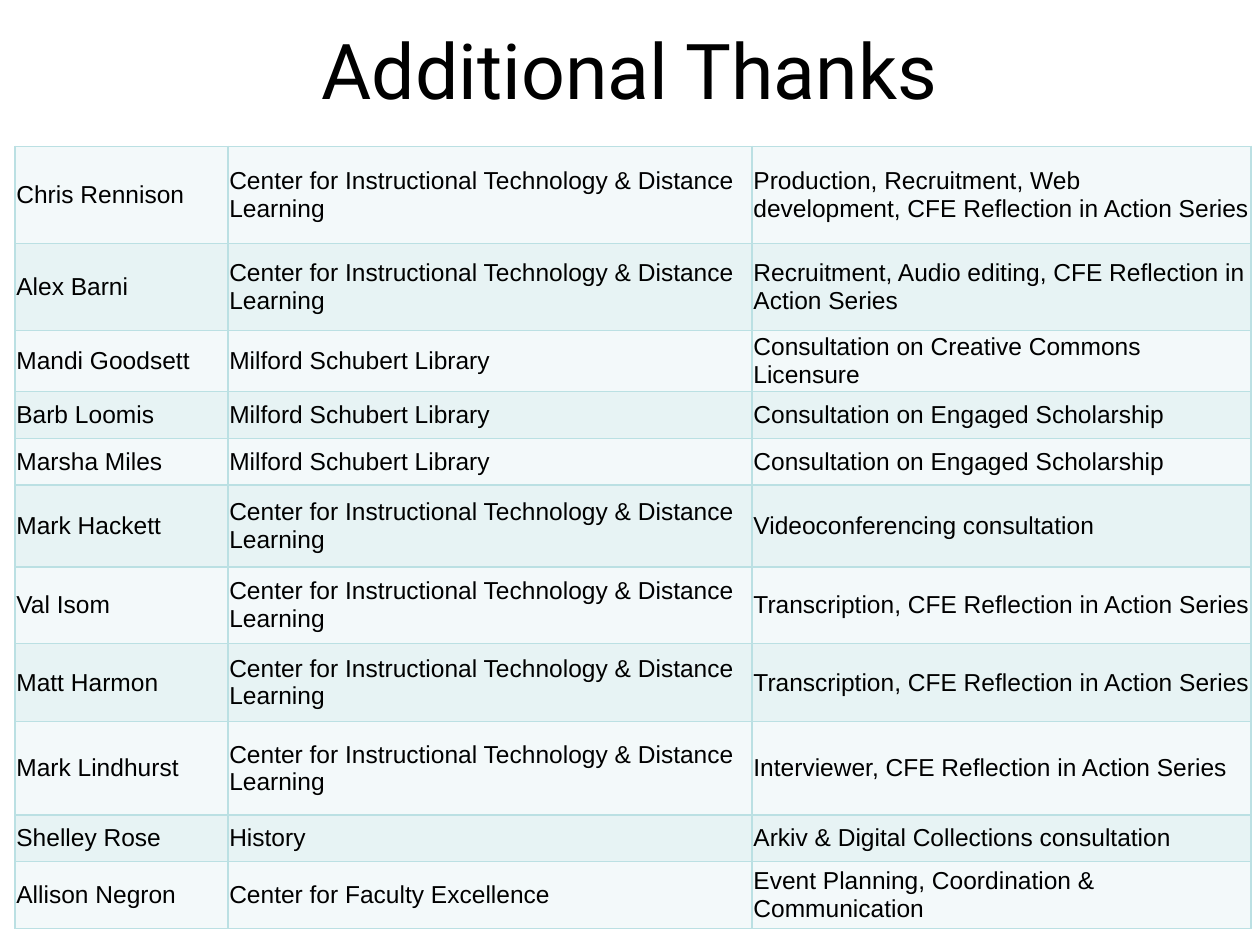
import pptx
import pptx.dml.color
import pptx.enum.text
import pptx.oxml
import pptx.oxml.ns
import pptx.util

SLIDE_WIDTH, SLIDE_HEIGHT = 10, 7.5
COLUMN_WIDTHS = [1.69, 4.16, 3.96]
ROW_HEIGHTS = [0.77, 0.69, 0.37, 0.37, 0.37, 0.65, 0.61, 0.62, 0.74, 0.37, 0.53]
ROW_FILLS = ["F3F9FA", "E7F3F4"]
BORDER_COLOUR = "BBE0E3"
TEXT_COLOUR = "000000"

TECHNOLOGY = "Center for Instructional Technology & Distance Learning"
LIBRARY = "Milford Schubert Library"
NO_BREAK_SPACE = chr(160)
SERIES = NO_BREAK_SPACE + "CFE Reflection in Action Series"

THANKS = [
    ("Chris Rennison", TECHNOLOGY, "Production, Recruitment, Web development," + SERIES),
    ("Alex Barni", TECHNOLOGY, "Recruitment, Audio editing," + SERIES),
    ("Mandi Goodsett", LIBRARY, "Consultation on Creative Commons Licensure"),
    ("Barb Loomis", LIBRARY, "Consultation on Engaged Scholarship"),
    ("Marsha Miles", LIBRARY, "Consultation on Engaged Scholarship"),
    ("Mark Hackett", TECHNOLOGY, "Videoconferencing consultation"),
    ("Val Isom", TECHNOLOGY, "Transcription," + SERIES),
    ("Matt Harmon", TECHNOLOGY, "Transcription," + SERIES),
    ("Mark Lindhurst", TECHNOLOGY, "Interviewer," + SERIES),
    ("Shelley Rose", "History", "Arkiv & Digital Collections consultation"),
    ("Allison Negron", "Center for Faculty Excellence",
     "Event Planning, Coordination & Communication"),
]


def colour(hex_string):
    return pptx.dml.color.RGBColor.from_string(hex_string)


def across(share):
    return pptx.util.Inches(SLIDE_WIDTH * share)


def down(share):
    return pptx.util.Inches(SLIDE_HEIGHT * share)


def add_run(paragraph, text, font_name, size):
    run = paragraph.add_run()
    run.text = text
    run.font.name = font_name
    run.font.size = pptx.util.Pt(size)
    run.font.color.rgb = colour(TEXT_COLOUR)


def add_title(slide, text):
    shape = slide.shapes.add_textbox(across(0.075), down(0.025), across(0.85), down(0.095))
    frame = shape.text_frame
    frame.word_wrap = True
    frame.vertical_anchor = pptx.enum.text.MSO_ANCHOR.MIDDLE
    paragraph = frame.paragraphs[0]
    paragraph.alignment = pptx.enum.text.PP_ALIGN.CENTER
    add_run(paragraph, text, "Roboto", 44)


def add_borders(cell):
    """Put a thin line on all four sides; lines must come before the cell's fill."""
    properties = cell._tc.get_or_add_tcPr()
    for position, side in enumerate(["lnL", "lnR", "lnT", "lnB"]):
        line = pptx.oxml.parse_xml(
            f'<a:{side} {pptx.oxml.ns.nsdecls("a")} w="{pptx.util.Pt(1)}">'
            f'<a:solidFill><a:srgbClr val="{BORDER_COLOUR}"/></a:solidFill></a:{side}>'
        )
        properties.insert(position, line)


def fill_cell(cell, text, fill):
    cell.fill.solid()
    cell.fill.fore_color.rgb = colour(fill)
    margin = pptx.util.Inches(0.01)
    cell.margin_left = cell.margin_right = margin
    cell.margin_top = cell.margin_bottom = margin
    cell.vertical_anchor = pptx.enum.text.MSO_ANCHOR.MIDDLE
    add_run(cell.text_frame.paragraphs[0], text, "Arial", 14)
    add_borders(cell)


def add_thanks_table(slide):
    table = slide.shapes.add_table(
        len(THANKS), len(COLUMN_WIDTHS), across(0.012), down(0.155),
        pptx.util.Inches(sum(COLUMN_WIDTHS)), pptx.util.Inches(sum(ROW_HEIGHTS)),
    ).table
    table.first_row = False
    table.horz_banding = False
    for column, width in zip(table.columns, COLUMN_WIDTHS):
        column.width = pptx.util.Inches(width)
    for index, (row, height) in enumerate(zip(table.rows, ROW_HEIGHTS)):
        row.height = pptx.util.Inches(height)
        for cell, text in zip(row.cells, THANKS[index]):
            fill_cell(cell, text, ROW_FILLS[index % 2])


def main():
    presentation = pptx.Presentation()
    presentation.slide_width = across(1)
    presentation.slide_height = down(1)
    slide = presentation.slides.add_slide(presentation.slide_layouts[6])
    add_title(slide, "Additional Thanks")
    add_thanks_table(slide)
    presentation.save("out.pptx")


if __name__ == "__main__":
    main()
